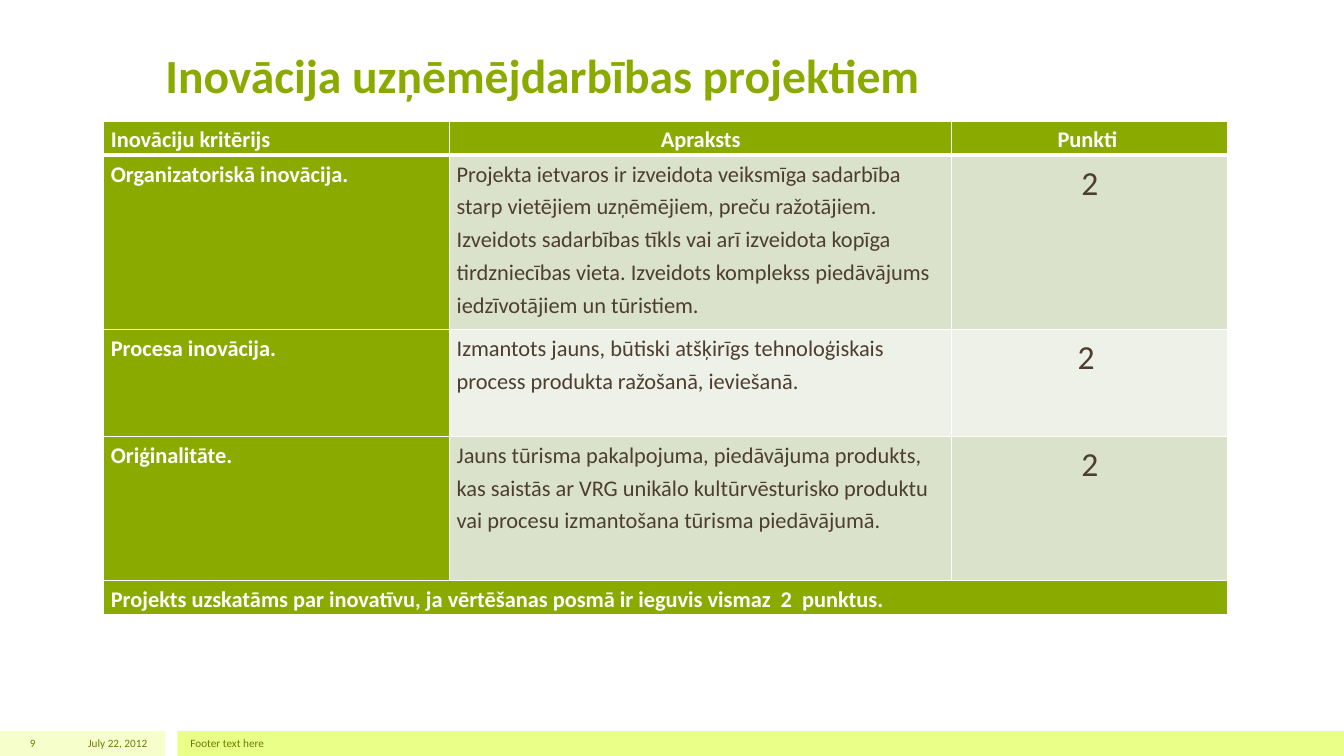
"""Build the slide with the innovation criteria table for business projects."""
from lxml import etree
from pptx import Presentation
from pptx.dml.color import RGBColor
from pptx.enum.shapes import MSO_SHAPE
from pptx.enum.text import MSO_ANCHOR, PP_ALIGN
from pptx.oxml.ns import qn
from pptx.util import Inches, Pt

RECT = MSO_SHAPE.RECTANGLE
BOTTOM, MIDDLE, TOP = MSO_ANCHOR.BOTTOM, MSO_ANCHOR.MIDDLE, MSO_ANCHOR.TOP
LEFT, CENTER, RIGHT = PP_ALIGN.LEFT, PP_ALIGN.CENTER, PP_ALIGN.RIGHT
GREEN, WHITE, BROWN, OLIVE = "8BAA00", "FFFFFF", "4D3E2F", "688000"
BANDS = ["DAE2CC", "EEF1E7"]


def rgb(value):
    return RGBColor.from_string(value)


def add_run(p, text, size, color, bold=False, align=LEFT):
    p.alignment = align
    r = p.add_run()
    r.text = text
    r.font.name = "Calibri"
    r.font.size = Pt(size)
    r.font.bold = bold
    r.font.color.rgb = rgb(color)


prs = Presentation()
prs.slide_width, prs.slide_height = Inches(13.33), Inches(7.5)
s = prs.slides.add_slide(prs.slide_layouts[5])

title = s.shapes.title
title.left, title.top = Inches(1.54), Inches(0.3)
title.width, title.height = Inches(10.25), Inches(1.29)
tf = title.text_frame
tf.word_wrap = True
tf.vertical_anchor = BOTTOM
tf.margin_bottom = Inches(0.57)
add_run(tf.paragraphs[0], "Inovācija uzņēmējdarbības projektiem", 34, GREEN, True)

for left, width, color in [(0, 1.64, "F6FFCC"), (1.76, 11.57, "E9FF88")]:
    sp = s.shapes.add_shape(RECT, Inches(left), Inches(7.25), Inches(width), Inches(0.25))
    sp.shadow.inherit = False
    sp.fill.solid()
    sp.fill.fore_color.rgb = rgb(color)
    sp.line.fill.background()

rows = [
    ("Inovāciju kritērijs", "Apraksts", "Punkti "),
    ("Organizatoriskā inovācija.",
     "Projekta ietvaros ir izveidota veiksmīga sadarbība starp vietējiem uzņēmējiem, "
     "preču ražotājiem. Izveidots sadarbības tīkls vai arī izveidota kopīga tirdzniecības "
     "vieta. Izveidots komplekss piedāvājums iedzīvotājiem un tūristiem.", "2"),
    ("Procesa inovācija.",
     "Izmantots jauns, būtiski atšķirīgs tehnoloģiskais process produkta ražošanā, "
     "ieviešanā.", "2 "),
    ("Oriģinalitāte.",
     "Jauns tūrisma pakalpojuma, piedāvājuma produkts, kas saistās ar VRG unikālo "
     "kultūrvēsturisko produktu vai procesu izmantošana tūrisma piedāvājumā.", "2"),
    ("Projekts uzskatāms par inovatīvu, ja vērtēšanas posmā ir ieguvis vismaz  2  punktus.",
     "", ""),
]
last = len(rows) - 1
table = s.shapes.add_table(len(rows), 3, Inches(1.03), Inches(1.2),
                           Inches(11.15), Inches(4.9)).table
for column, width in zip(table.columns, [3.43, 4.98, 2.74]):
    column.width = Inches(width)
for row, height in zip(table.rows, [0.34, 1.73, 1.06, 1.43, 0.34]):
    row.height = Inches(height)
table.cell(last, 0).merge(table.cell(last, 2))

for i, texts in enumerate(rows):
    for j, text in enumerate(texts):
        cell = table.cell(i, j)
        strong = i in (0, last) or j == 0
        cell.vertical_anchor = TOP
        cell.margin_left = cell.margin_right = Inches(0.07)
        cell.margin_top = cell.margin_bottom = 0
        cell.fill.solid()
        cell.fill.fore_color.rgb = rgb(GREEN if strong else BANDS[(i - 1) % 2])
        tcPr = cell._tc.get_or_add_tcPr()
        for k, side in enumerate(["lnL", "lnR", "lnT", "lnB"]):
            thick = (i, side) in [(0, "lnB"), (1, "lnT")]
            ln = etree.Element(qn("a:" + side), w=str(Pt(3 if thick else 1)))
            fill = etree.SubElement(ln, qn("a:solidFill"))
            etree.SubElement(fill, qn("a:srgbClr"), val=WHITE)
            tcPr.insert(k, ln)
        if text:
            p = cell.text_frame.paragraphs[0]
            p.line_spacing = 1.2
            p.space_before = Pt(2)
            centered = j == 2 or (i == 0 and j == 1)
            add_run(p, text, 24 if j == 2 and not strong else 16,
                    WHITE if strong else BROWN, strong, CENTER if centered else LEFT)

footers = [(0.47, 1.09, "July 22, 2012", RIGHT), (1.79, 10, "Footer text here", LEFT),
           (0, 0.45, "9", RIGHT)]
for left, width, text, align in footers:
    tb = s.shapes.add_textbox(Inches(left), Inches(7.25), Inches(width), Inches(0.25))
    tf = tb.text_frame
    tf.word_wrap = True
    tf.vertical_anchor = MIDDLE
    add_run(tf.paragraphs[0], text, 8, OLIVE, align=align)

prs.save("out.pptx")
